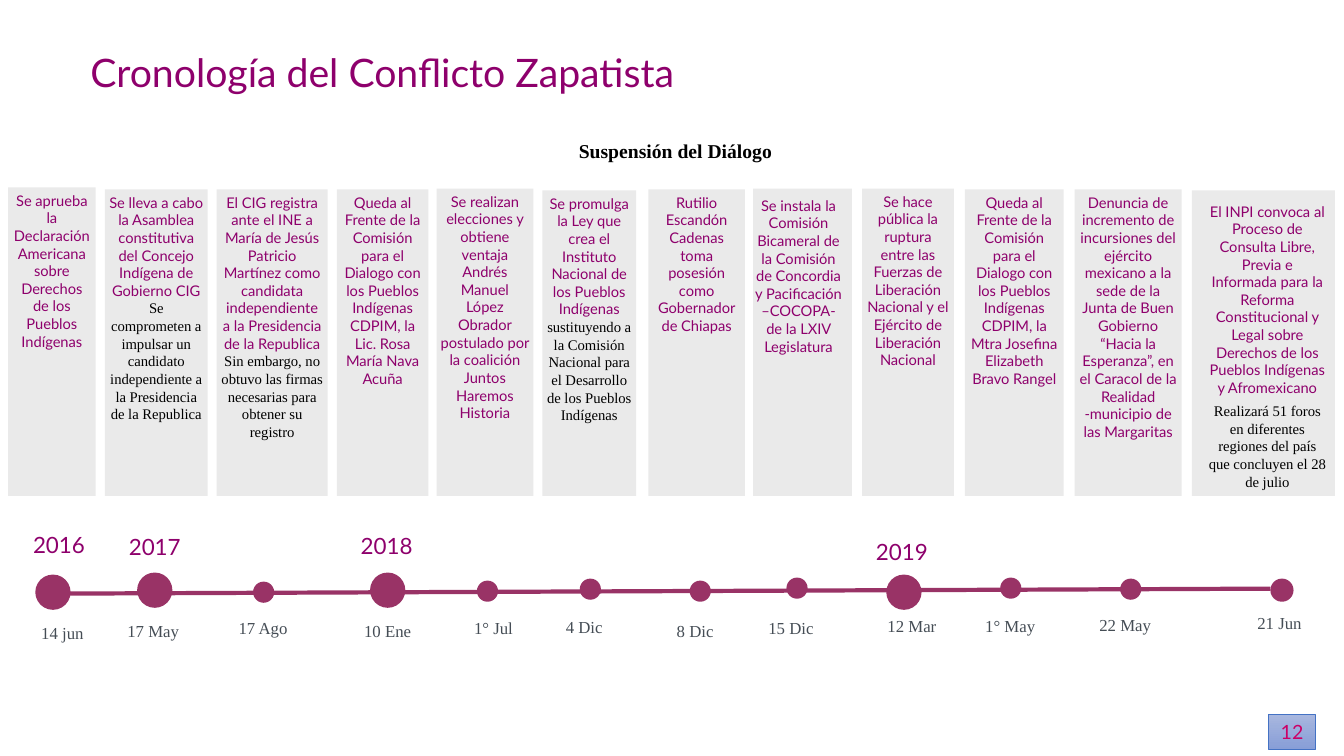
from pptx import Presentation
from pptx.dml.color import RGBColor
from pptx.enum.shapes import MSO_CONNECTOR, MSO_SHAPE
from pptx.enum.text import MSO_ANCHOR, PP_ALIGN
from pptx.oxml.ns import qn
from pptx.util import Inches, Pt
from lxml import etree

RECTANGLE, OVAL = MSO_SHAPE.RECTANGLE, MSO_SHAPE.OVAL
TOP, MIDDLE = MSO_ANCHOR.TOP, MSO_ANCHOR.MIDDLE
CENTER = PP_ALIGN.CENTER
STRAIGHT = MSO_CONNECTOR.STRAIGHT

SANS, SERIF = "Lato", "Times New Roman"
PURPLE, PLUM, GRAY, BLACK = "8E006C", "993366", "454D55", "000000"
CARD_BOTTOM = 4.92
CARD_INSETS = (0.04, 0.04, 0.04, 0.04)
NO_INSETS = (0, 0, 0, 0)
TEXT_INSETS = (0.1, 0.05, 0.1, 0.05)


def color(value):
    return RGBColor.from_string(value)


def write(shape, paragraphs, insets, anchor=TOP, spacing=1.0, gap=0):
    """Fill a shape with centred paragraphs of (text, size, font, colour, bold)."""
    frame = shape.text_frame
    frame.word_wrap = True
    frame.vertical_anchor = anchor
    (frame.margin_left, frame.margin_top,
     frame.margin_right, frame.margin_bottom) = [Inches(inset) for inset in insets]
    for index, (text, size, font, ink, bold) in enumerate(paragraphs):
        para = frame.add_paragraph() if index else frame.paragraphs[0]
        para.alignment = CENTER
        para.line_spacing = spacing
        if index and gap:
            para.space_before = Pt(gap)
        span = para.add_run()
        span.text = text
        span.font.size = Pt(size)
        span.font.name = font
        span.font.bold = bold
        span.font.color.rgb = color(ink)


deck = Presentation()
deck.slide_width, deck.slide_height = Inches(13.33), Inches(7.5)
page = deck.slides.add_slide(deck.slide_layouts[6])
shapes = page.shapes

# Title and subtitle
title = shapes.add_textbox(Inches(0.64), Inches(0.48), Inches(6.3), Inches(0.57))
write(title, [("Cronología del Conflicto Zapatista", 28, SANS, PURPLE, False)],
      TEXT_INSETS, spacing=0.9)
subtitle = shapes.add_textbox(Inches(5.22), Inches(1.36), Inches(2.96), Inches(0.41))
write(subtitle, [("Suspensión del Diálogo", 14, SERIF, BLACK, True)],
      TEXT_INSETS, spacing=0.9)

# Timeline axis
axis = shapes.add_connector(STRAIGHT, Inches(0.43), Inches(5.89), Inches(12.6), Inches(5.84))
axis.line.color.rgb = color(PLUM)
axis.line.width = Pt(3)
etree.SubElement(axis._element.spPr, qn("a:effectLst"))

# Events: card (left, top, width), dot (left, top, size),
# date (text, left, top, width, height), headline, detail
events = [
    ((0.08, 1.86, 0.87), (0.35, 5.7, 0.35), ("14 jun", 0.14, 6.16, 0.96, 0.26),
     "Se aprueba la Declaración Americana sobre Derechos de los Pueblos Indígenas", ""),
    ((1.04, 1.88, 1.02), (1.36, 5.68, 0.35), ("17 May", 1.04, 6.14, 0.96, 0.26),
     "Se lleva a cabo la Asamblea constitutiva del Concejo Indígena de Gobierno CIG",
     "Se comprometen a impulsar un candidato independiente a la Presidencia "
     "de la Republica"),
    ((2.15, 1.88, 1.1), (2.51, 5.77, 0.21), ("17 Ago", 2.13, 6.11, 0.96, 0.26),
     "El CIG registra ante el INE a María de Jesús Patricio Martínez como candidata "
     "independiente a la Presidencia de la Republica",
     "Sin embargo, no obtuvo las firmas necesarias para obtener su registro"),
    ((3.34, 1.88, 0.91), (3.67, 5.68, 0.35), ("10 Ene", 3.43, 6.13, 0.83, 0.29),
     "Queda al Frente de la Comisión para el Dialogo con los Pueblos Indígenas CDPIM, "
     "la Lic. Rosa María Nava Acuña", ""),
    ((4.33, 1.87, 0.96), (4.73, 5.76, 0.21), ("1° Jul", 4.48, 6.1, 0.83, 0.29),
     "Se realizan elecciones y obtiene ventaja Andrés Manuel López Obrador postulado "
     "por la coalición Juntos Haremos Historia", ""),
    ((5.38, 1.89, 0.93), (5.75, 5.74, 0.21), ("4 Dic", 5.38, 6.09, 0.83, 0.29),
     "Se promulga la Ley que crea el Instituto Nacional de los Pueblos Indígenas",
     "sustituyendo a la Comisión Nacional para el Desarrollo de los Pueblos Indígenas"),
    ((6.43, 1.88, 0.96), (6.84, 5.76, 0.21), ("8 Dic", 6.48, 6.13, 0.83, 0.29),
     "Rutilio Escandón Cadenas toma posesión como Gobernador de Chiapas", ""),
    ((7.47, 1.87, 0.98), (7.8, 5.73, 0.21), ("15 Dic", 7.43, 6.1, 0.83, 0.29),
     "Se instala la Comisión Bicameral de la Comisión de Concordia y Pacificación "
     "–COCOPA- de la LXIV Legislatura", ""),
    ((8.55, 1.87, 0.91), (8.79, 5.7, 0.35), ("12 Mar", 8.71, 6.08, 0.67, 0.29),
     "Se hace pública la ruptura entre las Fuerzas de Liberación Nacional y el Ejército "
     "de Liberación Nacional", ""),
    ((9.57, 1.88, 0.98), (9.92, 5.73, 0.21), ("1° May", 9.68, 6.12, 0.68, 0.2),
     "Queda al Frente de la Comisión para el Dialogo con los Pueblos Indígenas CDPIM, "
     "la Mtra Josefina Elizabeth Bravo Rangel", ""),
    ((10.66, 1.88, 1.06), (11.11, 5.74, 0.21), ("22 May", 10.82, 6.11, 0.68, 0.2),
     "Denuncia de incremento de incursiones del ejército mexicano a la sede de la Junta "
     "de Buen Gobierno “Hacia la Esperanza”, en el Caracol de la Realidad -municipio "
     "de las Margaritas", ""),
    ((11.82, 1.89, 1.42), (12.6, 5.74, 0.23), ("21 Jun", 12.35, 6.09, 0.68, 0.2),
     "El INPI convoca al Proceso de Consulta Libre, Previa e Informada para la Reforma "
     "Constitucional y Legal sobre Derechos de los Pueblos Indígenas y Afromexicano",
     "Realizará 51 foros en diferentes regiones del país que concluyen el 28 de julio"),
]
special_insets = {"15 Dic": (0, 0.08, 0.08, 0.08), "21 Jun": (0.16, 0.12, 0.08, 0.12)}

labels = [("2016", 0.22, 5.27, 0.73, 0.29), ("2017", 1.17, 5.29, 0.73, 0.29),
          ("2018", 3.47, 5.28, 0.73, 0.29), ("2019", 8.58, 5.34, 0.73, 0.29)]
label_styles = [(16, SANS, PURPLE, False)] * len(labels)

for (left, top, width), (dot_left, dot_top, size), date, headline, detail in events:
    card = (RECTANGLE, left, top, width, CARD_BOTTOM - top, "EAEAEA")
    dot = (OVAL, dot_left, dot_top, size, size, PLUM)
    drawn = []
    for kind, x, y, wide, high, fill in (card, dot):
        box = shapes.add_shape(kind, Inches(x), Inches(y), Inches(wide), Inches(high))
        box.shadow.inherit = False
        box.fill.solid()
        box.fill.fore_color.rgb = color(fill)
        box.line.fill.background()
        drawn.append(box)
    paragraphs = [(headline, 10.5, SANS, PURPLE, False)]
    if detail:
        paragraphs.append((detail, 10.5, SERIF, BLACK, False))
    insets = special_insets.get(date[0], CARD_INSETS)
    write(drawn[0], paragraphs, insets, gap=4 if date[0] == "21 Jun" else 0)
    labels.append(date)
    label_styles.append((12, SERIF, GRAY, False))

# Year and date labels
for (text, left, top, width, height), style in zip(labels, label_styles):
    label = shapes.add_textbox(Inches(left), Inches(top), Inches(width), Inches(height))
    write(label, [(text, *style)], NO_INSETS, MIDDLE, 0.9)

# Page number
number = shapes.add_shape(RECTANGLE, Inches(12.58), Inches(7.09), Inches(0.47), Inches(0.34))
number.shadow.inherit = False
number.fill.gradient()
number.fill.gradient_angle = 270
for stop, shade in zip(number.fill.gradient_stops, ("A8B7DF", "889ED7")):
    stop.color.rgb = color(shade)
number.line.color.rgb = color("4472C4")
number.line.width = Pt(0.5)
write(number, [("12", 14, SANS, "CC0066", False)], TEXT_INSETS)

deck.save("out.pptx")
